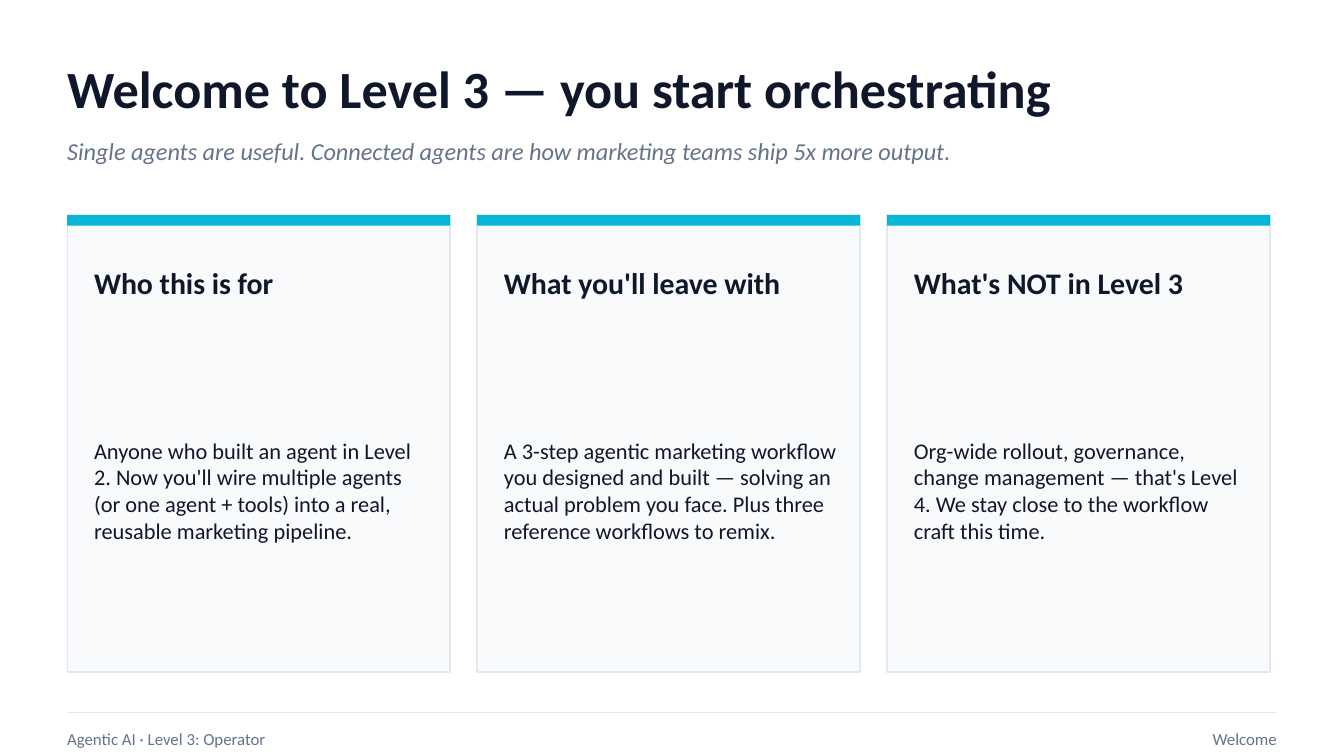
from lxml import etree
from pptx import Presentation
from pptx.dml.color import RGBColor
from pptx.enum.shapes import MSO_CONNECTOR, MSO_SHAPE
from pptx.enum.text import MSO_ANCHOR, MSO_AUTO_SIZE, PP_ALIGN
from pptx.oxml.ns import qn
from pptx.util import Inches, Pt

RECTANGLE = MSO_SHAPE.RECTANGLE
STRAIGHT = MSO_CONNECTOR.STRAIGHT
MIDDLE = MSO_ANCHOR.MIDDLE
NO_AUTOFIT = MSO_AUTO_SIZE.NONE
LEFT = PP_ALIGN.LEFT
RIGHT = PP_ALIGN.RIGHT

SLIDE_WIDTH = 10
SLIDE_HEIGHT = SLIDE_WIDTH * 9 / 16
TITLE_ONLY_LAYOUT = 5
FONT = "Calibri"
COLORS = {
    "background": "FFFFFF",
    "ink": "0F172A",
    "muted": "64748B",
    "card": "F8FAFC",
    "border": "E2E8F0",
    "accent": "06B6D4",
}

MARGIN = 0.5
CONTENT_WIDTH = SLIDE_WIDTH - 2 * MARGIN
CARD_TOP, CARD_WIDTH, CARD_HEIGHT = 1.6, 2.85, 3.4
CARD_GAP = 0.2
CARD_PADDING = 0.2
CARD_TEXT_WIDTH = 2.5
ACCENT_HEIGHT = 0.08
FOOTER_LINE_TOP, FOOTER_TOP, FOOTER_HEIGHT = 5.3, 5.35, 0.3
FOOTER_LEFT_WIDTH = 5

CARDS = [
    (
        "Who this is for",
        "Anyone who built an agent in Level 2. Now you'll wire multiple agents "
        "(or one agent + tools) into a real, reusable marketing pipeline.",
    ),
    (
        "What you'll leave with",
        "A 3-step agentic marketing workflow you designed and built — solving an "
        "actual problem you face. Plus three reference workflows to remix.",
    ),
    (
        "What's NOT in Level 3",
        "Org-wide rollout, governance, change management — that's Level 4. "
        "We stay close to the workflow craft this time.",
    ),
]


def color(name):
    return RGBColor.from_string(COLORS[name])


def write_text(shape, text, size, color_name="ink", bold=False, italic=False, align=LEFT):
    frame = shape.text_frame
    frame.word_wrap = True
    frame.auto_size = NO_AUTOFIT
    frame.vertical_anchor = MIDDLE
    frame.margin_left = frame.margin_top = frame.margin_right = frame.margin_bottom = 0
    paragraph = frame.paragraphs[0]
    paragraph.alignment = align
    run = paragraph.add_run()
    run.text = text
    run.font.name = FONT
    run.font.size = Pt(size)
    run.font.bold = bold
    run.font.italic = italic
    run.font.color.rgb = color(color_name)


def add_text(slide, left, top, width, height, text, **text_format):
    shape = slide.shapes.add_textbox(Inches(left), Inches(top), Inches(width), Inches(height))
    write_text(shape, text, **text_format)


def add_title(slide, text):
    title = slide.shapes.title
    title.left, title.top = Inches(MARGIN), Inches(0.35)
    title.width, title.height = Inches(CONTENT_WIDTH), Inches(0.6)
    write_text(title, text, size=28, bold=True)


def add_rectangle(slide, left, top, width, height, fill, border=None):
    shape = slide.shapes.add_shape(
        RECTANGLE, Inches(left), Inches(top), Inches(width), Inches(height)
    )
    shape.shadow.inherit = False
    shape.fill.solid()
    shape.fill.fore_color.rgb = color(fill)
    if border:
        shape.line.color.rgb = color(border)
        shape.line.width = Pt(0.75)
    else:
        shape.line.fill.background()


def add_card(slide, column, heading, body):
    left = MARGIN + column * (CARD_WIDTH + CARD_GAP)
    text_left = left + CARD_PADDING
    add_rectangle(slide, left, CARD_TOP, CARD_WIDTH, CARD_HEIGHT, "card", border="border")
    add_rectangle(slide, left, CARD_TOP, CARD_WIDTH, ACCENT_HEIGHT, "accent")
    add_text(slide, text_left, CARD_TOP + 0.25, CARD_TEXT_WIDTH, 0.5, heading, size=16, bold=True)
    add_text(slide, text_left, CARD_TOP + 0.85, CARD_TEXT_WIDTH, 2.4, body, size=12)


def add_footer(slide, left_text, right_text):
    line = slide.shapes.add_connector(
        STRAIGHT,
        Inches(MARGIN), Inches(FOOTER_LINE_TOP),
        Inches(MARGIN + CONTENT_WIDTH), Inches(FOOTER_LINE_TOP),
    )
    line.line.color.rgb = color("border")
    line.line.width = Pt(0.75)
    etree.SubElement(line._element.spPr, qn("a:effectLst"))
    add_text(slide, MARGIN, FOOTER_TOP, FOOTER_LEFT_WIDTH, FOOTER_HEIGHT, left_text,
             size=9, color_name="muted")
    add_text(slide, MARGIN + FOOTER_LEFT_WIDTH, FOOTER_TOP, CONTENT_WIDTH - FOOTER_LEFT_WIDTH,
             FOOTER_HEIGHT, right_text, size=9, color_name="muted", align=RIGHT)


def main():
    presentation = Presentation()
    presentation.slide_width = Inches(SLIDE_WIDTH)
    presentation.slide_height = Inches(SLIDE_HEIGHT)
    slide = presentation.slides.add_slide(presentation.slide_layouts[TITLE_ONLY_LAYOUT])
    slide.background.fill.solid()
    slide.background.fill.fore_color.rgb = color("background")

    add_title(slide, "Welcome to Level 3 — you start orchestrating")
    add_text(slide, MARGIN, 0.95, CONTENT_WIDTH, 0.35,
             "Single agents are useful. Connected agents are how marketing teams "
             "ship 5x more output.",
             size=13, color_name="muted", italic=True)
    for column, (heading, body) in enumerate(CARDS):
        add_card(slide, column, heading, body)
    add_footer(slide, "Agentic AI · Level 3: Operator", "Welcome")

    presentation.save("out.pptx")


if __name__ == "__main__":
    main()
